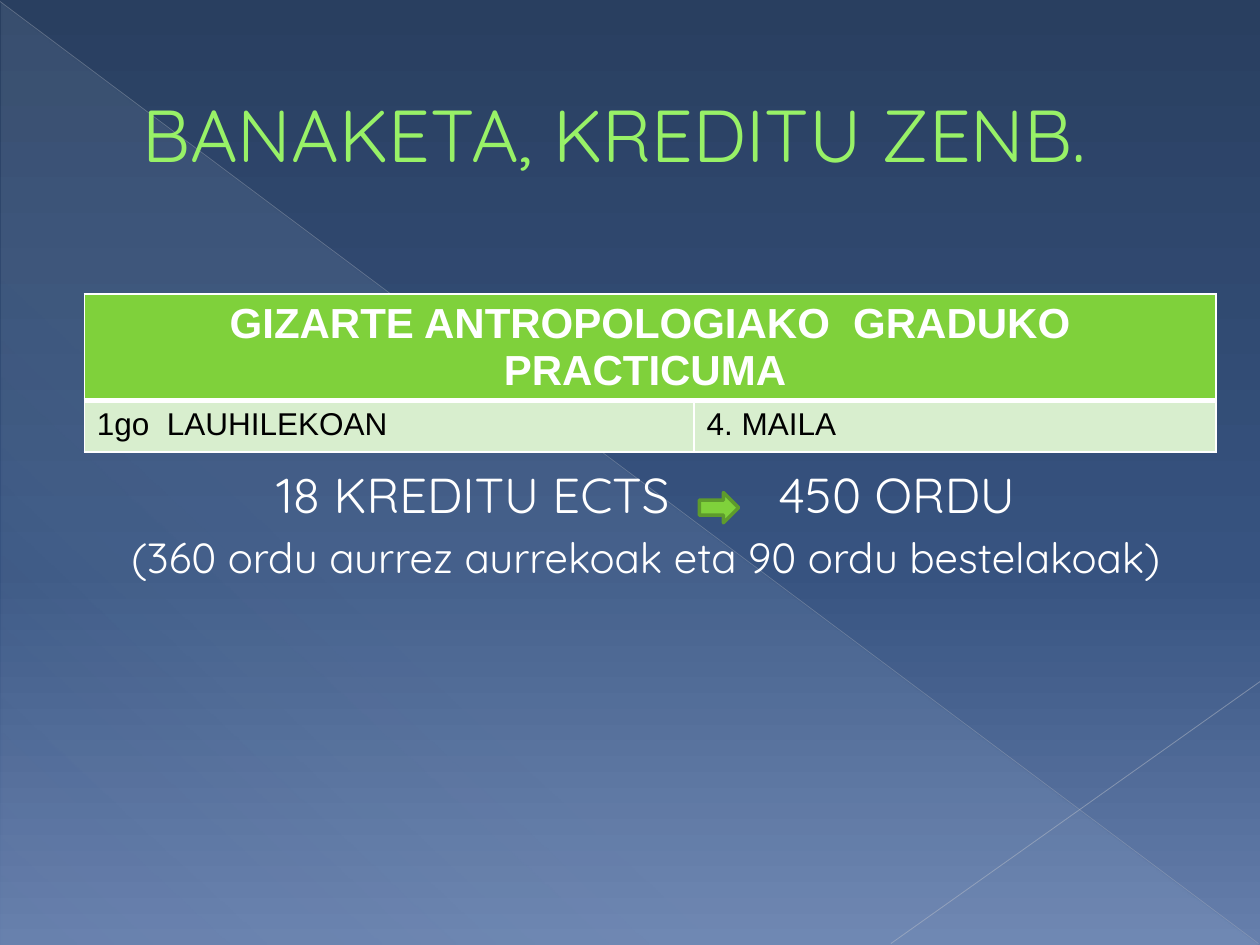
from dataclasses import dataclass
from lxml.etree import SubElement as Sub
from pptx import Presentation
from pptx.dml.color import RGBColor as Rgb
from pptx.enum.shapes import MSO_CONNECTOR as Link, MSO_SHAPE as Form
from pptx.enum.text import MSO_ANCHOR as Anchor, MSO_AUTO_SIZE as Fit, PP_ALIGN as Align
from pptx.oxml.ns import qn
from pptx.util import Cm, Pt


@dataclass(frozen=True)
class Theme:
    """Colours, fonts and type sizes of the slide."""
    lime: str = "98F167"
    green: str = "7FD13B"
    dark: str = "5E9B2C"
    pale: str = "D8EECE"
    white: str = "FFFFFF"
    black: str = "000000"
    sky: tuple = ((0, "293F60", 100), (60, "375380", 100), (100, "667FAC", 100))
    veil: tuple = ((0, "D6ECFF", 10), (70, "D6ECFF", 8), (100, "D6ECFF", 1))
    round: str = "Quicksand"
    plain: str = "Arial"
    title: int = 42
    large: int = 28
    mid: int = 24
    small: int = 18


@dataclass(frozen=True)
class Ray:
    """A thin translucent line, with ends in centimetres."""
    start: tuple
    end: tuple
    color: str
    width: float
    alpha: int


@dataclass(frozen=True)
class Entry:
    """A table cell with its text and look."""
    row: int
    col: int
    text: str
    fill: str
    ink: str
    size: int
    bold: bool
    align: Align


LOOK = Theme()
RAYS = (
    Ray((0, 0.03), (25.37, 19.02), "B7BCC5", 0.39, 35),
    Ray((25.4, 13.74), (17.96, 19.02), "BFC3CB", 0.47, 45),
)
CELLS = (
    Entry(0, 0, "GIZARTE ANTROPOLOGIAKO  GRADUKO PRACTICUMA ", LOOK.green,
          LOOK.white, LOOK.mid, True, Align.CENTER),
    Entry(1, 0, "1go  LAUHILEKOAN", LOOK.pale, LOOK.black, LOOK.small, False, Align.LEFT),
    Entry(1, 1, "4. MAILA", LOOK.pale, LOOK.black, LOOK.small, False, Align.LEFT),
)


def place(shape, left: float, top: float, width: float, height: float) -> None:
    """Move and size a shape in centimetres."""
    shape.left, shape.top, shape.width, shape.height = map(Cm, (left, top, width, height))


def style(para, face: str, size: int, ink: str, bold: bool = False) -> None:
    """Format every run of a paragraph."""
    for run in para.runs:
        font = run.font
        font.name, font.size, font.bold = face, Pt(size), bold
        font.color.rgb = Rgb.from_string(ink)


def tint(node, color: str, alpha: int) -> None:
    """Add a colour with its opacity to an XML node."""
    tone = Sub(node, qn("a:srgbClr"), val=color)
    if alpha < 100:
        Sub(tone, qn("a:alpha"), val=str(alpha * 1000))


def blend(fill, root, stops: tuple, angle: int) -> None:
    """Turn a fill into a linear gradient."""
    fill.gradient()
    grad = root.find(".//" + qn("a:gradFill"))
    for child in list(grad):
        grad.remove(child)
    group = Sub(grad, qn("a:gsLst"))
    for pos, color, alpha in stops:
        tint(Sub(group, qn("a:gs"), pos=str(pos * 1000)), color, alpha)
    Sub(grad, qn("a:lin"), ang=str(angle * 60000), scaled="0")


def draw_ray(shapes, ray: Ray) -> None:
    """Draw one translucent line."""
    line = shapes.add_connector(Link.STRAIGHT, *map(Cm, ray.start + ray.end))
    line.line.width = Pt(ray.width)
    line.line.fill.solid()
    props = line._element.spPr
    solid = props.find(".//" + qn("a:solidFill"))
    for child in list(solid):
        solid.remove(child)
    tint(solid, ray.color, ray.alpha)
    Sub(props, qn("a:effectLst"))


def edge(cell, row: int) -> None:
    """Rule a cell in white, thick between header and body."""
    props = cell._tc.get_or_add_tcPr()
    sides = {"L": 1, "R": 1, "T": 3 if row else 1, "B": 1 if row else 3}
    for spot, (side, width) in enumerate(sides.items()):
        rule = Sub(props, qn("a:ln" + side), w=str(Pt(width)))
        tint(Sub(rule, qn("a:solidFill")), LOOK.white, 100)
        props.insert(spot, rule)


def draw_table(shapes) -> None:
    """Draw the practicum table."""
    grid = shapes.add_table(2, 2, Cm(1.7), Cm(5.93), Cm(22.81), Cm(3.17)).table
    for col, width in zip(grid.columns, (12.29, 10.52)):
        col.width = Cm(width)
    for row, height in zip(grid.rows, (2.13, 1.04)):
        row.height = Cm(height)
    grid.cell(0, 0).merge(grid.cell(0, 1))
    for item in CELLS:
        cell = grid.cell(item.row, item.col)
        cell.text_frame.text = item.text
        para = cell.text_frame.paragraphs[0]
        para.alignment = item.align
        style(para, LOOK.plain, item.size, item.ink, item.bold)
        cell.fill.solid()
        cell.fill.fore_color.rgb = Rgb.from_string(item.fill)
    for row in range(2):
        for col in range(2):
            edge(grid.cell(row, col), row)


def indent(para, margin: float, first: float):
    """Set the indents of a paragraph and return its properties."""
    props = para._p.get_or_add_pPr()
    props.set("marL", str(Cm(margin)))
    props.set("indent", str(Cm(first)))
    return props


def write_title(title) -> None:
    """Fill the title."""
    place(title, 1.27, 0.74, 22.86, 3.89)
    frame = title.text_frame
    frame.text = "BANAKETA, KREDITU ZENB."
    frame.auto_size, frame.vertical_anchor = Fit.NONE, Anchor.MIDDLE
    para = frame.paragraphs[0]
    para.alignment = Align.LEFT
    indent(para, 1.35, 0)
    style(para, LOOK.round, LOOK.title, LOOK.lime)


def write_body(body) -> None:
    """Fill the two lines on credits and hours."""
    place(body, 1.5, 9.23, 22.86, 8)
    frame = body.text_frame
    frame.text = ("18 KREDITU ECTS\n"
                  "(360 ordu aurrez aurrekoak eta 90 ordu bestelakoak)")
    frame.auto_size, frame.vertical_anchor = Fit.NONE, Anchor.TOP
    sums, note = frame.paragraphs
    gap, hours = sums.add_run(), sums.add_run()
    gap.text, hours.text = " ", "450 ORDU"
    for para, size, space in ((sums, LOOK.large, 0), (note, LOOK.mid, 5)):
        para.alignment, para.space_before = Align.CENTER, Pt(space)
        style(para, LOOK.round, size, LOOK.white)
        Sub(indent(para, 1.24, -1.07), qn("a:buNone"))
    gap.font._element.set("spc", "5450")


def main() -> None:
    """Build and save the slide."""
    deck = Presentation()
    deck.slide_width, deck.slide_height = Cm(25.4), Cm(19.05)
    slide = deck.slides.add_slide(deck.slide_layouts[1])
    shapes = slide.shapes
    title, body = shapes.title, slide.placeholders[1]
    blend(slide.background.fill, slide.element, LOOK.sky, 90)
    veil = shapes.add_shape(Form.RIGHT_TRIANGLE, Cm(0.03), Cm(0.05), Cm(25.35), Cm(19))
    veil.shadow.inherit = False
    blend(veil.fill, veil._element, LOOK.veil, 133)
    veil.line.fill.background()
    for ray in RAYS:
        draw_ray(shapes, ray)
    for holder in (title, body):
        shapes._spTree.append(holder._element)
    write_title(title)
    write_body(body)
    draw_table(shapes)
    arrow = shapes.add_shape(Form.RIGHT_ARROW, Cm(14.1), Cm(9.93), Cm(0.79), Cm(0.61))
    arrow.shadow.inherit = False
    arrow.fill.solid()
    arrow.fill.fore_color.rgb = Rgb.from_string(LOOK.green)
    arrow.line.color.rgb = Rgb.from_string(LOOK.dark)
    arrow.line.width = Pt(2)
    deck.save("out.pptx")


if __name__ == "__main__":
    main()
